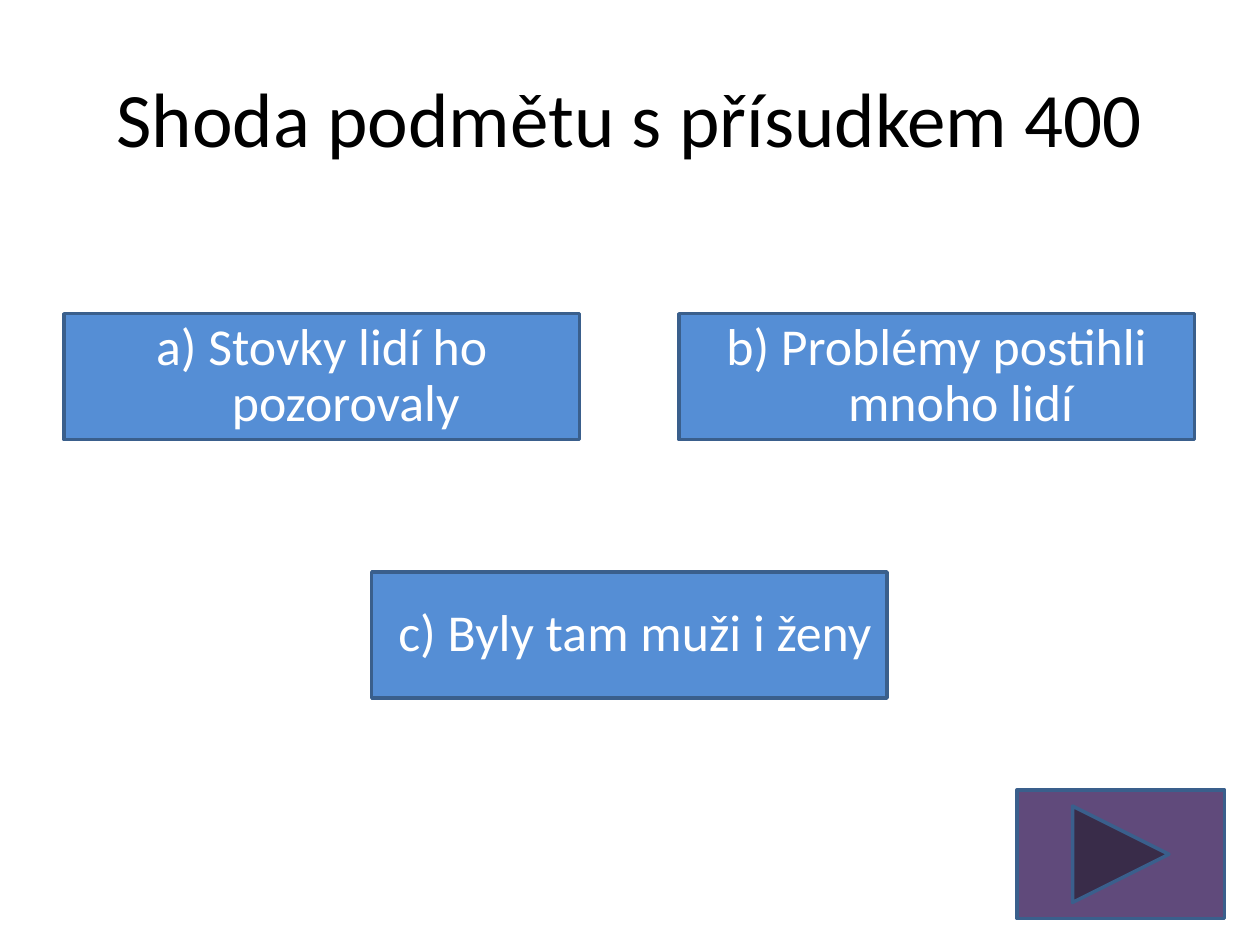
from pptx import Presentation
from pptx import util as u
from pptx.dml.color import RGBColor
from pptx.enum import shapes, text

OUTLINE = "3A5F8C"


def paint(shape, fill):
    shape.shadow.inherit = False
    shape.fill.solid()
    shape.fill.fore_color.rgb = RGBColor.from_string(fill)
    shape.line.color.rgb = RGBColor.from_string(OUTLINE)
    shape.line.width = u.Pt(2)


def write(shape, words, size, color, hanging=0, line_spacing=None, before=None):
    frame = shape.text_frame
    frame.word_wrap = True
    frame.vertical_anchor = text.MSO_ANCHOR.MIDDLE
    paragraph = frame.paragraphs[0]
    paragraph.alignment = text.PP_ALIGN.CENTER
    if line_spacing:
        paragraph.line_spacing = line_spacing
    if before:
        paragraph.space_before = u.Pt(before)
    if hanging:
        properties = paragraph._p.get_or_add_pPr()
        properties.set("marL", str(u.Inches(hanging)))
        properties.set("indent", str(-u.Inches(hanging)))
    run = paragraph.add_run()
    run.text = words
    run.font.name = "Calibri"
    run.font.size = u.Pt(size)
    run.font.color.rgb = RGBColor.from_string(color)


prs = Presentation()
prs.slide_width, prs.slide_height = u.Inches(10), u.Inches(7.5)
slide = prs.slides.add_slide(prs.slide_layouts[6])

# Question title
title = slide.shapes.add_textbox(u.Inches(0.5), u.Inches(0.3), u.Inches(9), u.Inches(1.25))
write(title, "Shoda podmětu s přísudkem 400", size=44, color="000000")

# Answer buttons
answers = [
    ("a) Stovky lidí ho pozorovaly", 0.51, 2.49),
    ("b) Problémy postihli mnoho lidí", 5.39, 2.49),
    (" c) Byly tam muži i ženy", 2.95, 4.54),
]
for words, left, top in answers:
    answer = slide.shapes.add_shape(
        shapes.MSO_SHAPE.ACTION_BUTTON_CUSTOM,
        u.Inches(left), u.Inches(top), u.Inches(4.09), u.Inches(1))
    paint(answer, "558ED5")
    write(answer, words, size=29.6, color="FFFFFF",
          hanging=0.38, line_spacing=0.9, before=6)

# Next-slide button
forward = slide.shapes.add_shape(
    shapes.MSO_SHAPE.ACTION_BUTTON_FORWARD_OR_NEXT,
    u.Inches(8.07), u.Inches(6.27), u.Inches(1.65), u.Inches(1.02))
paint(forward, "604A7B")

prs.save("out.pptx")
